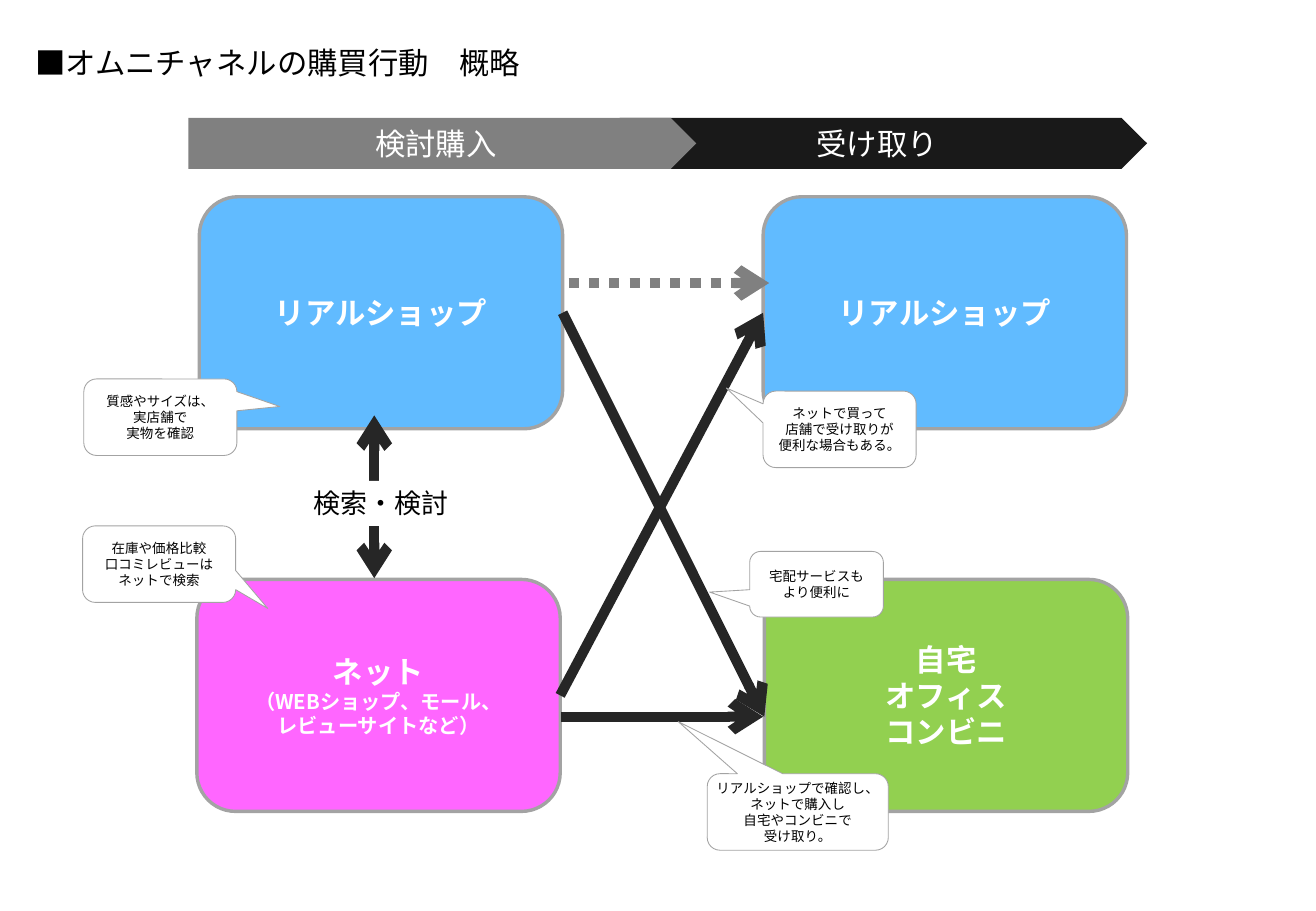
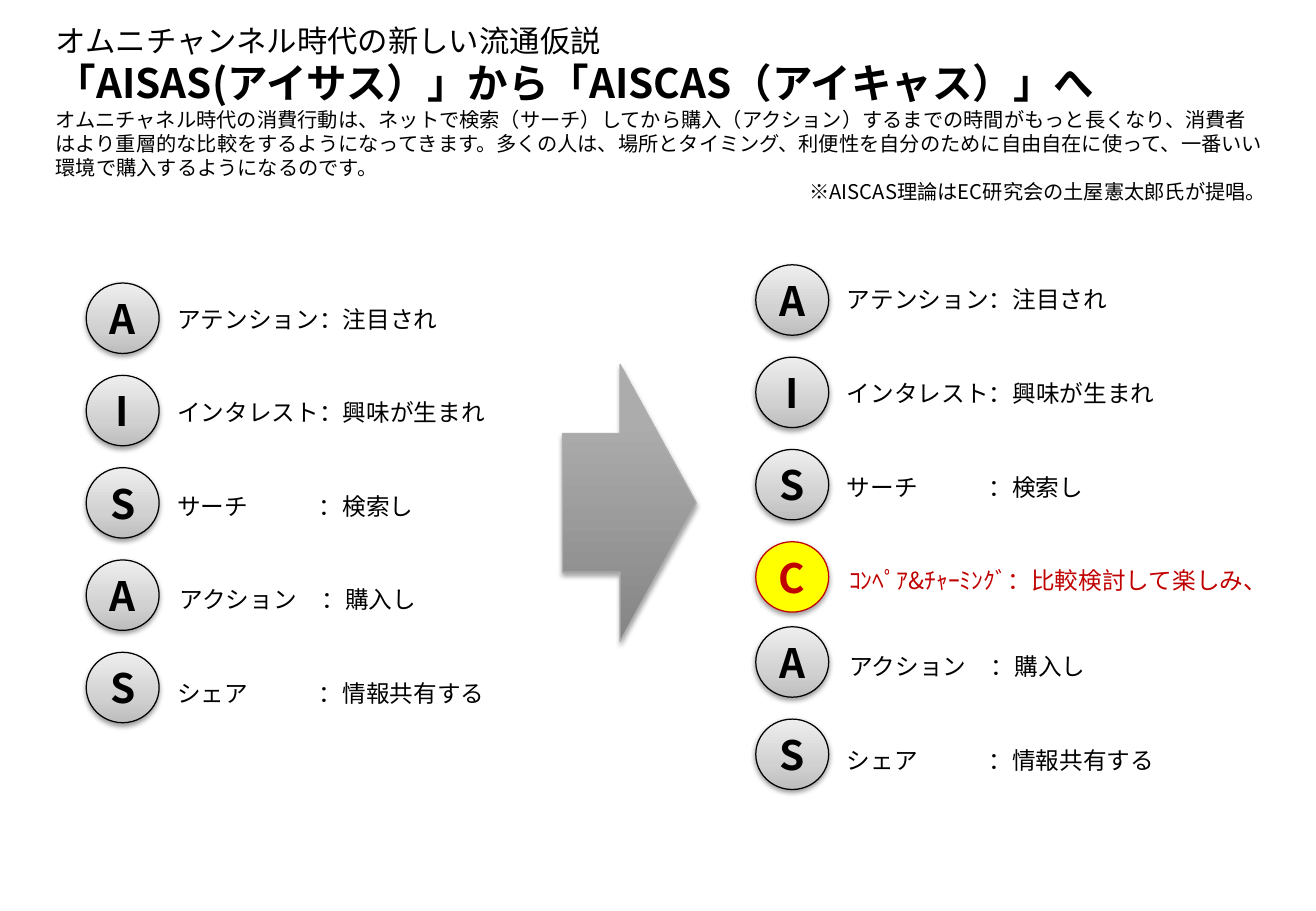
from dataclasses import dataclass

from lxml import etree
from pptx import Presentation
from pptx import util as u
from pptx.dml.color import RGBColor
from pptx.enum import dml, shapes, text
from pptx.oxml import parse_xml
from pptx.oxml.ns import nsdecls, qn


@dataclass(frozen=True)
class Theme:
    font: str = "Noto Sans CJK JP"
    leading: float = 1.2
    black: str = "000000"
    white: str = "FFFFFF"
    ink: str = "262626"
    dark: str = "191919"
    gray: str = "808080"
    border: str = "A3A3A3"
    blue: str = "61BBFF"
    pink: str = "FF66FF"
    green: str = "92D050"
    red: str = "C00000"
    yellow: str = "FFFF00"
    note: int = 8
    body: int = 12
    label: int = 14
    caption: int = 16
    heading: int = 18
    display: int = 24


T = Theme()
KIND = shapes.MSO_SHAPE
LEFT, CENTER, RIGHT = text.PP_ALIGN.LEFT, text.PP_ALIGN.CENTER, text.PP_ALIGN.RIGHT
TOP, MIDDLE = text.MSO_ANCHOR.TOP, text.MSO_ANCHOR.MIDDLE
TOP_SIDE, LEFT_SIDE, BOTTOM_SIDE, RIGHT_SIDE = range(4)

FLOW_TITLE = [("■オムニチャネルの購買行動　概略", T.heading, False)]
PHASES = [
    ("受け取り", (5.1, 0.97, 4.34, 0.42), T.dark),
    ("検討購入", (1.55, 0.97, 4.18, 0.42), T.gray),
]
PLACE_SIZE = (2.99, 1.91)
PLACES = {
    "shop": ((1.64, 1.62), T.blue, [("リアルショップ", T.heading)]),
    "net": ((1.62, 4.77), T.pink, [
        ("ネット", T.heading),
        ("（WEBショップ、モール、", T.body),
        ("レビューサイトなど）", T.body),
    ]),
    "home": ((6.29, 4.77), T.green, [
        ("自宅", T.heading), ("オフィス", T.heading), ("コンビニ", T.heading),
    ]),
    "pickup": ((6.28, 1.62), T.blue, [("リアルショップ", T.heading)]),
}
ROUTES = [
    (("net", RIGHT_SIDE), ("pickup", LEFT_SIDE), T.ink, ["tail"], False),
    ((3.08, 3.42), (3.08, 4.76), T.ink, ["head", "tail"], False),
    ((4.68, 2.33), (6.33, 2.33), T.gray, ["tail"], True),
    ((4.62, 5.9), (6.28, 5.9), T.ink, ["tail"], False),
    (("shop", RIGHT_SIDE), (6.29, 5.9), T.ink, ["tail"], False),
]
SEARCH_LABEL = ("検索・検討", (2.19, 3.96, 1.89, 0.37))
CALLOUTS = [
    (["質感やサイズは、", "実店舗で", "実物を確認"],
     (0.69, 3.12, 1.26, 0.63), (0.78, -0.14)),
    (["在庫や価格比較", "口コミレビューは", "ネットで検索"],
     (0.68, 4.33, 1.26, 0.63), (0.71, 0.58)),
    (["ネットで買って", "店舗で受け取りが", "便利な場合もある。"],
     (6.28, 3.22, 1.26, 0.63), (-0.74, -0.54)),
    (["リアルショップで確認し、", "ネットで購入し", "自宅やコンビニで", "受け取り。"],
     (5.82, 6.37, 1.49, 0.63), (-0.66, -1.18)),
    (["宅配サービスも", "より便利に"],
     (6.17, 4.54, 1.1, 0.54), (-0.8, 0.12)),
]

MODEL_TITLE = [
    ("オムニチャンネル時代の新しい流通仮説", T.heading, False),
    ("「AISAS(アイサス）」から「AISCAS（アイキャス）」へ", T.display, True),
]
SUMMARY = (
    "オムニチャネル時代の消費行動は、ネットで検索（サーチ）してから購入（アクション）"
    "するまでの時間がもっと長くなり、消費者はより重層的な比較をするようになってきます。"
    "多くの人は、場所とタイミング、利便性を自分のために自由自在に使って、"
    "一番いい環境で購入するようになるのです。"
)
CREDIT = "※AISCAS理論はEC研究会の土屋憲太郎氏が提唱。"
AISAS = [
    ("A", "アテンション", "注目され"),
    ("I", "インタレスト", "興味が生まれ"),
    ("S", "サーチ", "検索し"),
    ("A", "アクション", "購入し"),
    ("S", "シェア", "情報共有する"),
]
COMPARE = ("C", "ｺﾝﾍﾟｱ&ﾁｬｰﾐﾝｸﾞ", "比較検討して楽しみ、")
AISCAS = AISAS[:3] + [COMPARE] + AISAS[3:]
MODELS = [(AISAS, 0.71, 2.33, 2.46, 2.97), (AISCAS, 6.22, 2.18, 2.3, 3.8)]
BADGE_SIZE = (0.6, 0.58)
BADGE_STEP, LABEL_STEP, AFTER_COMPARE = 0.76, 0.77, -0.06
LABEL_OFFSET, LABEL_HEIGHT, NAME_WIDTH = 0.65, 0.34, 6
BADGE_GRADIENT = [(0, "BDBDBD"), (35, "D1D1D1"), (100, "EEEEEE")]
ARROW_GRADIENT = [(0, "858585"), (80, "ACACAC"), (100, "ADADAD")]


def rgb(value):
    return RGBColor.from_string(value)


def inches(values):
    return [u.Inches(value) for value in values]


def write(frame, lines, color=T.black, align=LEFT, anchor=TOP, inset=None):
    frame.word_wrap = True
    frame.auto_size = text.MSO_AUTO_SIZE.NONE
    frame.vertical_anchor = anchor
    sides = (0.1, 0.05, 0.1, 0.05) if inset is None else (inset,) * 4
    (frame.margin_left, frame.margin_top,
     frame.margin_right, frame.margin_bottom) = inches(sides)
    for index, (words, size, bold) in enumerate(lines):
        para = frame.add_paragraph() if index else frame.paragraphs[0]
        para.add_run().text = words
        para.alignment = align
        para.line_spacing = u.Pt(size * T.leading)
        para.font.size = u.Pt(size)
        para.font.bold = bold
        para.font.color.rgb = rgb(color)
        para.font.name = T.font
        defaults = para._p.pPr.find(qn("a:defRPr"))
        etree.SubElement(defaults, qn("a:ea")).set("typeface", T.font)
    return frame


def set_title(page, lines, at):
    title = page.shapes.title
    title.left, title.top, title.width, title.height = inches(at)
    write(title.text_frame, lines)


def add_text(page, at, lines, **style):
    return write(page.shapes.add_textbox(*inches(at)).text_frame, lines, **style)


def add_box(page, kind, at, fill=None, line=None, width=0.75):
    box = page.shapes.add_shape(kind, *inches(at))
    box.shadow.inherit = False
    if fill:
        box.fill.solid()
        box.fill.fore_color.rgb = rgb(fill)
    if line:
        box.line.color.rgb = rgb(line)
        box.line.width = u.Pt(width)
    else:
        box.line.fill.background()
    return box


def add_gradient(box, stops):
    marks = "".join(
        f'<a:gs pos="{share * 1000}"><a:srgbClr val="{color}"/></a:gs>'
        for share, color in stops)
    box._element.spPr.find(qn("a:prstGeom")).addnext(parse_xml(
        f'<a:gradFill {nsdecls("a")} rotWithShape="1"><a:gsLst>{marks}</a:gsLst>'
        '<a:lin ang="16200000" scaled="0"/></a:gradFill>'))


def add_shadow(box, distance, opacity):
    box._element.spPr.find(qn("a:effectLst")).append(parse_xml(
        f'<a:outerShdw {nsdecls("a")} blurRad="{u.Pt(3.1)}" dist="{u.Pt(distance)}" '
        f'dir="5400000" rotWithShape="0"><a:srgbClr val="{T.black}">'
        f'<a:alpha val="{opacity * 1000}"/></a:srgbClr></a:outerShdw>'))


def add_route(page, places, start, end, color, heads, dotted):
    points = [(0, 0) if isinstance(stop[0], str) else stop for stop in (start, end)]
    route = page.shapes.add_connector(
        shapes.MSO_CONNECTOR.STRAIGHT, *inches(points[0] + points[1]))
    for stop, connect in ((start, route.begin_connect), (end, route.end_connect)):
        if isinstance(stop[0], str):
            connect(places[stop[0]], stop[1])
    route.line.color.rgb = rgb(color)
    route.line.width = u.Pt(6)
    if dotted:
        route.line.dash_style = dml.MSO_LINE.ROUND_DOT
    outline = route.line._get_or_add_ln()
    for head in heads:
        etree.SubElement(outline, qn(f"a:{head}End")).set("type", "arrow")
    etree.SubElement(route._element.spPr, qn("a:effectLst"))


def build_flow(page):
    set_title(page, FLOW_TITLE, (0.19, 0.31, 5.07, 0.4))
    for name, at, color in PHASES:
        phase = add_box(page, KIND.PENTAGON, at, color)
        write(phase.text_frame, [(name, T.heading, False)], T.white, CENTER, MIDDLE)
    places = {}
    for name, (corner, color, lines) in PLACES.items():
        place = add_box(page, KIND.ROUNDED_RECTANGLE, corner + PLACE_SIZE,
                        color, T.border, 2)
        write(place.text_frame, [(words, size, True) for words, size in lines],
              T.white, CENTER, MIDDLE)
        places[name] = place
    for route in ROUTES:
        add_route(page, places, *route)
    words, at = SEARCH_LABEL
    search = add_box(page, KIND.RECTANGLE, at, T.white)
    write(search.text_frame, [(words, T.caption, False)], align=CENTER)
    for lines, at, pointer in CALLOUTS:
        callout = add_box(page, KIND.ROUNDED_RECTANGULAR_CALLOUT, at,
                          T.white, T.border, 0.5)
        callout.adjustments[0], callout.adjustments[1] = pointer
        write(callout.text_frame, [(words, T.note, False) for words in lines],
              align=CENTER, anchor=MIDDLE, inset=0)


def add_step(page, step, badge_corner, label_at):
    letter, name, meaning = step
    special = step == COMPARE
    color = T.red if special else T.black
    badge = add_box(page, KIND.OVAL, badge_corner + BADGE_SIZE,
                    T.yellow if special else None, color)
    if not special:
        add_gradient(badge, BADGE_GRADIENT)
    add_shadow(badge, 1.6, 38)
    write(badge.text_frame, [(letter, T.display, True)], color, CENTER, MIDDLE, 0)
    gap = "\t" if len(name) < NAME_WIDTH else ""
    frame = add_text(page, label_at, [(f"{name}{gap}：{meaning}", T.label, False)],
                     color=color)
    if gap:
        stop = u.Pt(T.label * NAME_WIDTH)
        frame.paragraphs[0]._p.pPr.find(qn("a:defRPr")).addprevious(parse_xml(
            f'<a:tabLst {nsdecls("a")}><a:tab pos="{stop}" algn="l"/></a:tabLst>'))


def build_model(page):
    set_title(page, MODEL_TITLE, (0.36, 0.13, 10.16, 0.75))
    summary = add_text(page, (0.36, 0.83, 10.16, 0.92),
                       [(SUMMARY, T.body, False), (CREDIT, T.body, False)])
    summary.paragraphs[1].alignment = RIGHT
    arrow = add_box(page, KIND.RIGHT_ARROW, (4.63, 3, 1.1, 2.28), line="AEAEAE")
    arrow.adjustments[0], arrow.adjustments[1] = 0.5, 0.57
    add_gradient(arrow, ARROW_GRADIENT)
    add_shadow(arrow, 1.8, 35)
    for steps, left, badge_top, label_top, label_width in MODELS:
        shift = 0
        for row, step in enumerate(steps):
            nudge = 0.02 if step in (COMPARE, AISAS[3]) else 0
            add_step(page, step,
                     (left, badge_top + row * BADGE_STEP + shift),
                     (left + LABEL_OFFSET + nudge, label_top + row * LABEL_STEP + shift,
                      label_width, LABEL_HEIGHT))
            if step == COMPARE:
                shift = AFTER_COMPARE


def main():
    deck = Presentation()
    deck.slide_width, deck.slide_height = inches((10.83, 7.5))
    for build in (build_flow, build_model):
        build(deck.slides.add_slide(deck.slide_layouts[5]))
    deck.save("out.pptx")


if __name__ == "__main__":
    main()
